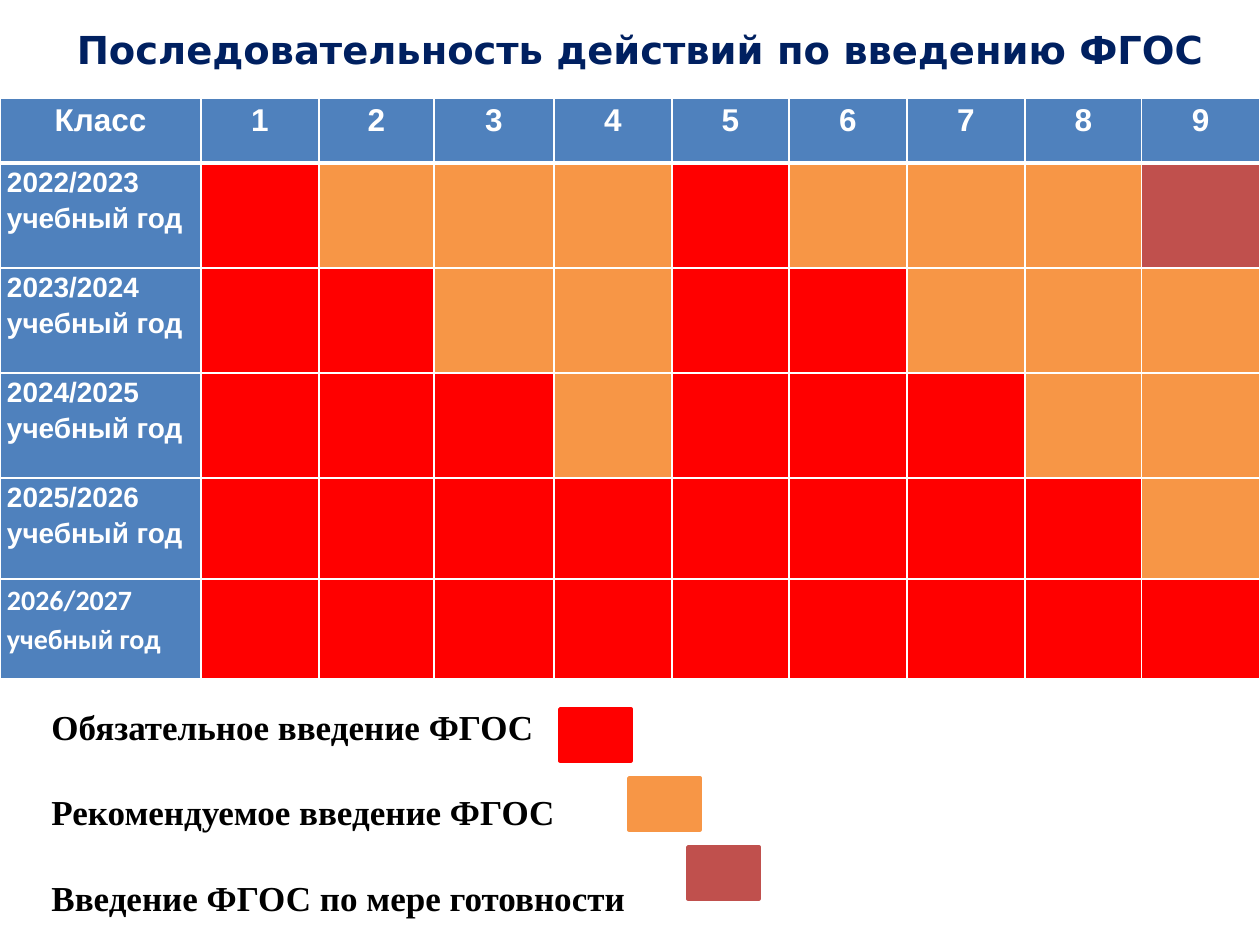
from lxml import etree
from pptx import Presentation
from pptx import util as u
from pptx.dml.color import RGBColor
from pptx.enum import shapes, text
from pptx.oxml.ns import qn

PX = 914400 // 126  # EMU in one px
COLORS = {
    "navy": "002060", "white": "FFFFFF", "black": "000000", "head": "4F81BD",
    "required": "FF0000", "advised": "F79646", "ready": "C0504D",
}
COLUMNS = [201, 118, 115, 120, 118, 117, 118, 118, 117, 118]
ROWS = [65, 105, 105, 105, 101, 100]
FIRST_YEAR = 2022
LEGEND = [
    ("Обязательное введение ФГОС", "required", 560, 709),
    ("Рекомендуемое введение ФГОС", "advised", 629, 778),
    ("Введение ФГОС по мере готовности", "ready", 688, 847),
]


def px(n):
    return u.Emu(n * PX)


def rgb(name):
    return RGBColor.from_string(COLORS[name])


def write(p, content, size, font, color, align=text.PP_ALIGN.LEFT, spacing=None, before=0):
    p.alignment = align
    p.line_spacing = spacing
    p.space_before = u.Pt(before)
    r = p.add_run()
    r.text = content
    r.font.size = u.Pt(size)
    r.font.name = font
    r.font.bold = True
    r.font.color.rgb = rgb(color)


def add_text_frame(slide, x, y, w, h, anchor=text.MSO_ANCHOR.TOP):
    tf = slide.shapes.add_textbox(px(x), px(y), px(w), px(h)).text_frame
    tf.word_wrap = True
    tf.vertical_anchor = anchor
    return tf


def style_cell(cell, color, top=1, bottom=1):
    cell.margin_left = cell.margin_right = px(7)
    cell.margin_top = cell.margin_bottom = 0
    tc_pr = cell._tc.get_or_add_tcPr()
    for side, width in (("L", 1), ("R", 1), ("T", top), ("B", bottom)):
        ln = etree.SubElement(tc_pr, qn("a:ln" + side), w=str(u.Pt(width)))
        fill = etree.SubElement(ln, qn("a:solidFill"))
        etree.SubElement(fill, qn("a:srgbClr"), val=COLORS["white"])
    cell.fill.solid()
    cell.fill.fore_color.rgb = rgb(color)


def stage(year, grade):
    """Each year one more grade joins in both the 1-4 and the 5-9 school."""
    if grade <= year + 1 or 5 <= grade <= year + 5:
        return "required"
    return "ready" if (year, grade) == (0, 9) else "advised"


def add_schedule(slide):
    table = slide.shapes.add_table(len(ROWS), len(COLUMNS), 0, px(98),
                                   px(sum(COLUMNS)), px(sum(ROWS))).table
    for column, width in zip(table.columns, COLUMNS):
        column.width = px(width)
    for row, height in zip(table.rows, ROWS):
        row.height = px(height)

    # Header row
    for grade in range(len(COLUMNS)):
        cell = table.cell(0, grade)
        style_cell(cell, "head", bottom=3)
        write(cell.text_frame.paragraphs[0], str(grade) if grade else "Класс", 18,
              "Arial", "white", align=text.PP_ALIGN.CENTER, spacing=1.15)

    # School years
    for year in range(len(ROWS) - 1):
        top = 1 if year else 3
        start = FIRST_YEAR + year
        cell = table.cell(year + 1, 0)
        style_cell(cell, "head", top=top)
        font = "Calibri" if year == len(ROWS) - 2 else "Arial"
        write(cell.text_frame.paragraphs[0], f"{start}/{start + 1} учебный год", 16,
              font, "white", spacing=1.15)
        for grade in range(1, len(COLUMNS)):
            style_cell(table.cell(year + 1, grade), stage(year, grade), top=top)


def add_swatch(slide, color, x, y):
    sp = slide.shapes.add_shape(shapes.MSO_SHAPE.RECTANGLE, px(x), px(y), px(71), px(52))
    sp.shadow.inherit = False
    sp.fill.solid()
    sp.fill.fore_color.rgb = rgb(color)
    sp.line.color.rgb = rgb(color)
    sp.line.width = u.Pt(2)


def add_legend(slide):
    tf = add_text_frame(slide, 39, 699, 1191, 224)
    for i, (label, color, x, y) in enumerate(LEGEND):
        p = tf.add_paragraph() if i else tf.paragraphs[0]
        write(p, label, 20, "Times New Roman", "black", before=25 if i else 0)
        add_swatch(slide, color, x, y)


def main():
    prs = Presentation()
    prs.slide_width, prs.slide_height = px(1260), px(945)
    slide = prs.slides.add_slide(prs.slide_layouts[6])

    # Title
    tf = add_text_frame(slide, 40, 0, 1200, 98, anchor=text.MSO_ANCHOR.MIDDLE)
    write(tf.paragraphs[0], "Последовательность действий по введению ФГОС", 22,
          "DejaVu Sans", "navy", align=text.PP_ALIGN.CENTER)

    add_schedule(slide)
    add_legend(slide)
    prs.save("out.pptx")


if __name__ == "__main__":
    main()
